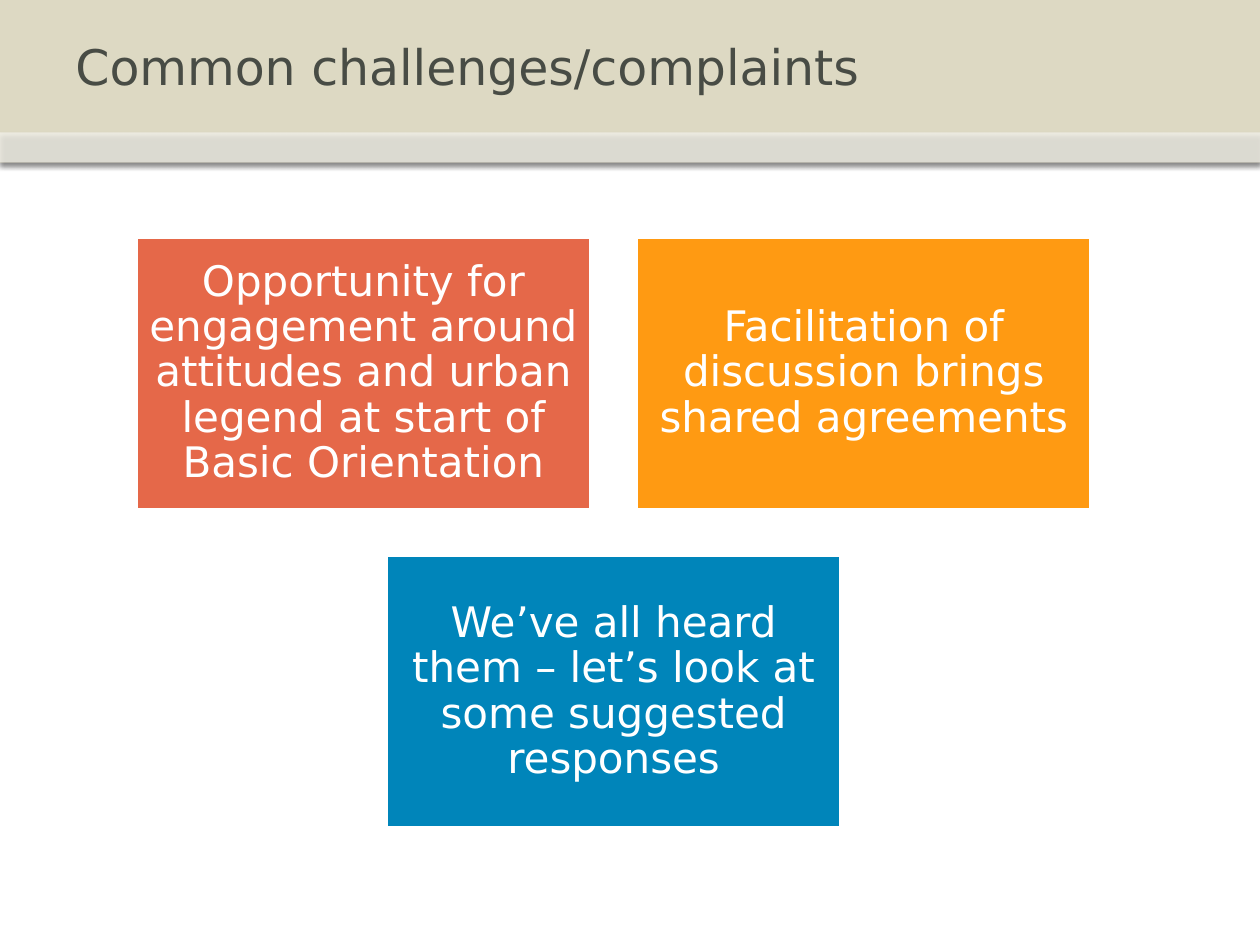
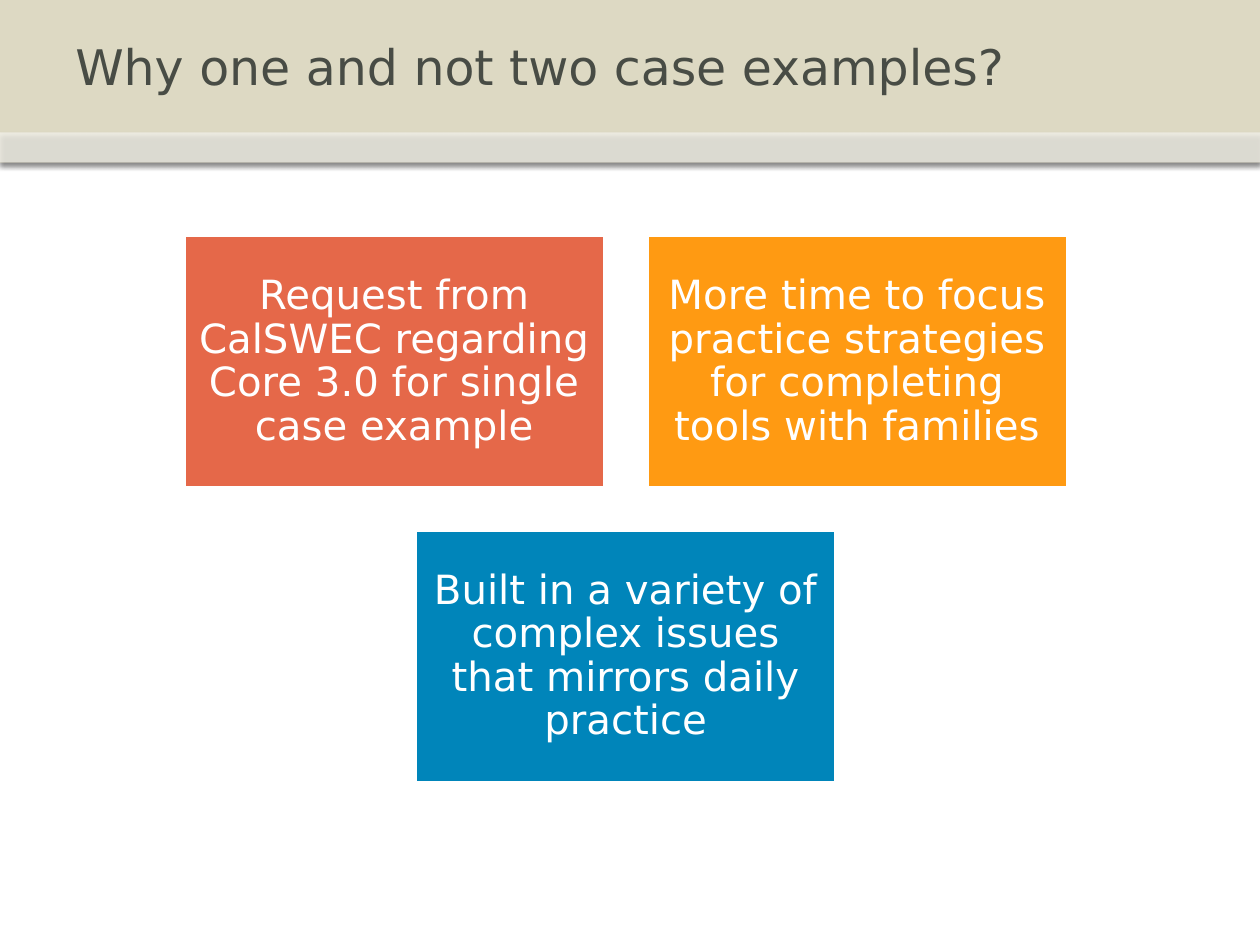
from dataclasses import dataclass

from lxml import etree
from pptx import Presentation
from pptx.dml.color import RGBColor
from pptx.enum.shapes import MSO_SHAPE
from pptx.enum.text import MSO_ANCHOR, PP_ALIGN
from pptx.oxml.ns import qn
from pptx.shapes.autoshape import Shape
from pptx.slide import Slide
from pptx.util import Inches, Pt

RECTANGLE = MSO_SHAPE.RECTANGLE
MIDDLE = MSO_ANCHOR.MIDDLE
LEFT, CENTER = PP_ALIGN.LEFT, PP_ALIGN.CENTER

COLORS = {
    "band": "DDD9C3",
    "white": "FFFFFF",
    "title": "484C45",
    "shadow": "000000",
    "coral": "E56849",
    "orange": "FF9A12",
    "blue": "0085BA",
}
FONT = "DejaVu Sans"
SLIDE_WIDTH, SLIDE_HEIGHT = 10, 7.5
TITLE_HEIGHT, STRIP_HEIGHT = 1.05, 0.24
TITLE_SIZE = 28
CARD_COLORS = ("coral", "orange", "blue")
CARD_RATIO, GAP_RATIO = 0.6, 0.1
CARD_INSET = Inches(0.1)
SHADOW_FORMAT = {
    "blurRad": Pt(3.1), "dist": Pt(1.8), "dir": 90 * 60000,
    "algn": "t", "rotWithShape": 0,
}


@dataclass(frozen=True)
class CardSlide:
    """A title and three cards: two above, one centred below."""
    title: str
    left: float
    top: float
    card_width: float
    text_size: int
    cards: tuple[str, str, str]


CARD_SLIDES = (
    CardSlide("Common challenges/complaints", 1.08, 1.88, 3.61, 24, (
        "Opportunity for engagement around attitudes and urban legend "
        "at start of Basic Orientation",
        "Facilitation of discussion brings shared agreements",
        "We’ve all heard them – let’s look at some suggested responses",
    )),
    CardSlide("Why one and not two case examples?", 1.46, 1.87, 3.34, 23, (
        "Request from CalSWEC regarding Core 3.0 for single case example",
        "More time to focus practice strategies for completing tools "
        "with families",
        "Built in a variety of complex issues that mirrors daily practice",
    )),
)


def rgb(name: str) -> RGBColor:
    return RGBColor.from_string(COLORS[name])


def set_alpha(color: etree._Element, percent: int) -> None:
    etree.SubElement(color, qn("a:alpha"), val=str(percent * 1000))


def write_text(shape: Shape, text: str, size: int, color: str,
               align: PP_ALIGN, line_spacing: float = 1.0) -> None:
    frame = shape.text_frame
    frame.word_wrap = True
    frame.vertical_anchor = MIDDLE
    paragraph = frame.paragraphs[0]
    paragraph.text = text
    paragraph.alignment = align
    paragraph.line_spacing = line_spacing
    for attribute, value in {"name": FONT, "size": Pt(size)}.items():
        setattr(paragraph.font, attribute, value)
    paragraph.font.color.rgb = rgb(color)


def add_rectangle(slide: Slide, left: float, top: float, width: float,
                  height: float, fill: str) -> Shape:
    shape = slide.shapes.add_shape(RECTANGLE, Inches(left), Inches(top),
                                   Inches(width), Inches(height))
    shape.fill.solid()
    shape.fill.fore_color.rgb = rgb(fill)
    shape.line.fill.background()
    shape.shadow.inherit = False
    return shape


def add_band(slide: Slide, top: float, height: float, fill: str) -> Shape:
    """Add a full-width band with a soft shadow below it."""
    band = add_rectangle(slide, 0, top, SLIDE_WIDTH, height, fill)
    effects = band._element.spPr.find(qn("a:effectLst"))
    shadow = etree.SubElement(effects, qn("a:outerShdw"))
    for attribute, value in SHADOW_FORMAT.items():
        shadow.set(attribute, str(value))
    color = etree.SubElement(shadow, qn("a:srgbClr"), val=COLORS["shadow"])
    set_alpha(color, 35)
    return band


def add_header(slide: Slide, title: str) -> None:
    add_band(slide, 0, TITLE_HEIGHT + STRIP_HEIGHT, "band")
    strip = add_band(slide, TITLE_HEIGHT, STRIP_HEIGHT, "white")
    set_alpha(strip._element.spPr.find(
        f"{qn('a:solidFill')}/{qn('a:srgbClr')}"), 53)
    title_box = slide.shapes.add_textbox(Inches(0.5), 0, Inches(9),
                                         Inches(TITLE_HEIGHT))
    write_text(title_box, title, TITLE_SIZE, "title", LEFT)


def add_cards(slide: Slide, content: CardSlide) -> None:
    width = content.card_width
    height = width * CARD_RATIO
    gap = width * GAP_RATIO
    grid_places = ((0, 0), (1, 0), (0.5, 1))
    for text, fill, (column, row) in zip(content.cards, CARD_COLORS,
                                         grid_places):
        card = add_rectangle(slide, content.left + column * (width + gap),
                             content.top + row * (height + gap),
                             width, height, fill)
        card.line.color.rgb = rgb("white")
        card.line.width = Pt(2)
        for side in ("left", "top", "right", "bottom"):
            setattr(card.text_frame, f"margin_{side}", CARD_INSET)
        write_text(card, text, content.text_size, "white", CENTER, 0.9)


def main() -> None:
    presentation = Presentation()
    presentation.slide_width = Inches(SLIDE_WIDTH)
    presentation.slide_height = Inches(SLIDE_HEIGHT)
    blank_layout = presentation.slide_layouts[6]
    for content in CARD_SLIDES:
        slide = presentation.slides.add_slide(blank_layout)
        add_header(slide, content.title)
        add_cards(slide, content)
    presentation.save("out.pptx")


if __name__ == "__main__":
    main()
